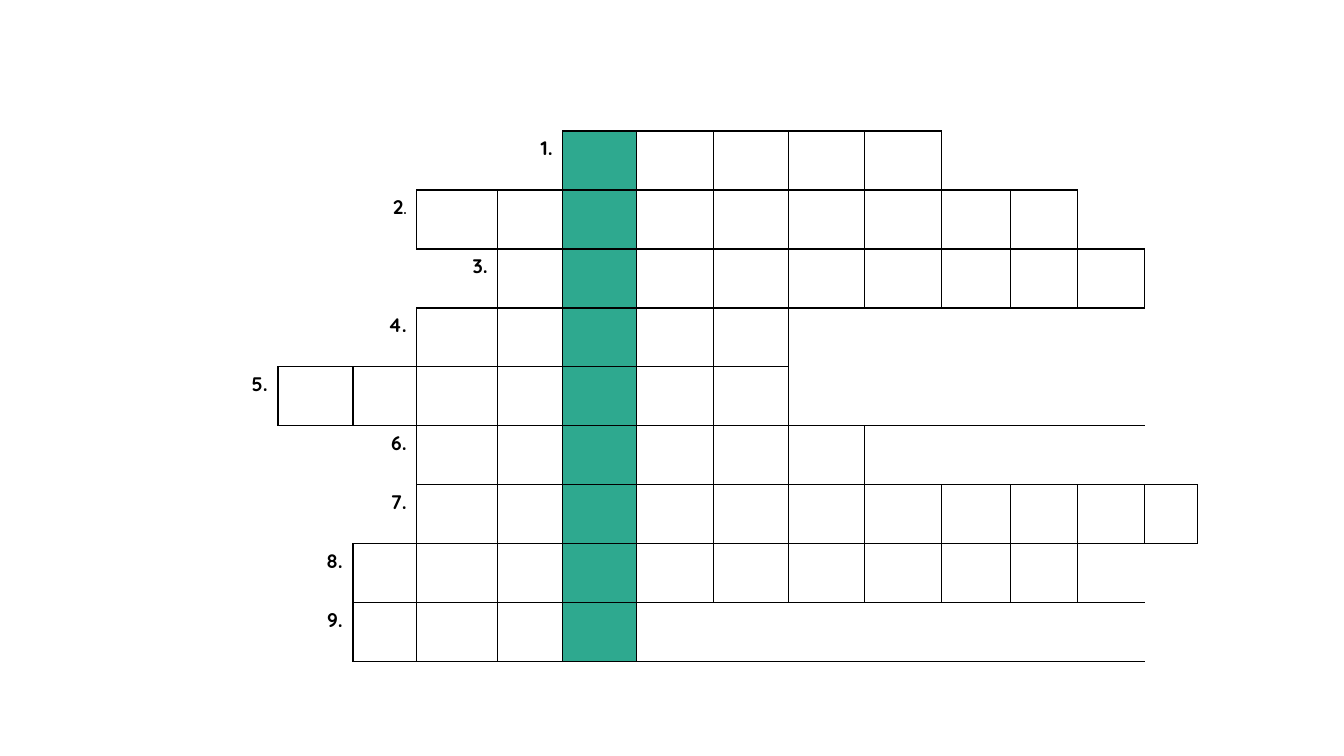
import pptx
import pptx.dml.color
import pptx.enum.text
import pptx.oxml
import pptx.oxml.ns
import pptx.util

BLACK = pptx.dml.color.RGBColor(0x00, 0x00, 0x00)
WHITE = pptx.dml.color.RGBColor(0xFF, 0xFF, 0xFF)
GREEN = pptx.dml.color.RGBColor(0x2E, 0xA9, 0x8F)
NO_STYLE = "{2D5ABB26-0587-4C30-8999-92F81FD0307C}"
EMU_PER_PX = 914400 / 100.8
KEY_COLUMN = 5
LABEL_FORMAT = {"name": "Quicksand", "size": pptx.util.Pt(14), "bold": True}


def px(n):
    return pptx.util.Emu(round(n * EMU_PER_PX))


def add_borders(cell, sides):
    tcPr = cell._tc.get_or_add_tcPr()
    lines = [pptx.oxml.parse_xml(
        f'<a:ln{side} {pptx.oxml.ns.nsdecls("a")} w="12700"><a:solidFill>'
        f'<a:srgbClr val="{BLACK}"/></a:solidFill></a:ln{side}>') for side in sides]
    for i, line in enumerate(lines):
        tcPr.insert(i, line)


prs = pptx.Presentation()
prs.slide_width, prs.slide_height = px(1344), px(756)
s = prs.slides.add_slide(prs.slide_layouts[6])

# Crossword grid
widths = [75, 75, 64, 81, 65, 74, 77, 75, 76, 77, 69, 67, 67, 53]
heights = [59] * 9 + [65]
frame = s.shapes.add_table(len(heights), len(widths), px(203), px(131),
                           px(sum(widths)), px(sum(heights)))
table = frame.table
table.first_row = table.horz_banding = False
table._tbl.tblPr.find(pptx.oxml.ns.qn("a:tableStyleId")).text = NO_STYLE
for column, width in zip(table.columns, widths):
    column.width = px(width)
for row, height in zip(table.rows, heights):
    row.height = px(height)

# First and last letter column of each word
words = [(5, 9), (3, 11), (4, 12), (3, 7), (1, 7), (3, 8), (3, 13), (2, 11), (2, 5)]
for cell in table.iter_cells():
    cell.fill.background()
for i, (first, last) in enumerate(words):
    # The last word is open at the bottom
    sides = "LRTB" if i < len(words) - 1 else "LRT"
    for j in range(first, last + 1):
        cell = table.cell(i, j)
        cell.fill.solid()
        cell.fill.fore_color.rgb = GREEN if j == KEY_COLUMN else WHITE
        add_borders(cell, sides)

    # Word number
    label = table.cell(i, first - 1)
    label.fill.solid()
    label.fill.fore_color.rgb = WHITE
    p = label.text_frame.paragraphs[0]
    p.alignment = pptx.enum.text.PP_ALIGN.RIGHT
    for text in ("2", ".") if i == 1 else (f"{i + 1}.",):
        r = p.add_run()
        r.text = text
        for name, value in LABEL_FORMAT.items():
            setattr(r.font, name, value)
        r.font.color.rgb = BLACK
        if text == ".":
            r.font.size = pptx.util.Pt(10)

# Empty areas around the words
for top, left, bottom, right in [(0, 0, 3, 1), (3, 8, 4, 12), (3, 13, 4, 13), (5, 0, 8, 0),
                                 (5, 1, 6, 1), (5, 10, 5, 12), (8, 6, 8, 12), (9, 0, 9, 12)]:
    table.cell(top, left).merge(table.cell(bottom, right))
add_borders(table.cell(8, 6), "T")

prs.save("out.pptx")
